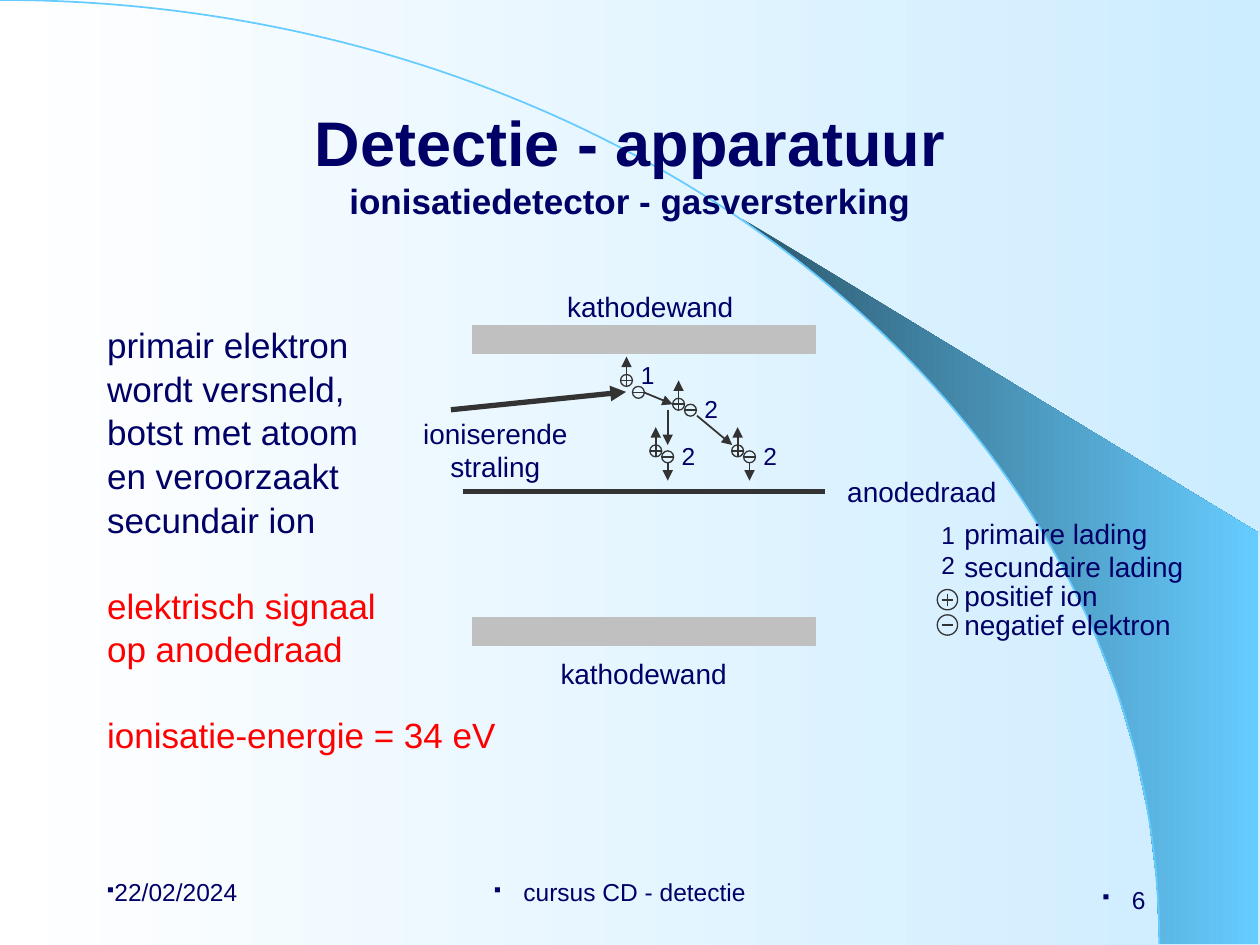
from dataclasses import dataclass
from math import asin, cos, pi, sin

from lxml.etree import SubElement
from pptx import Presentation
from pptx.dml.color import RGBColor
from pptx.enum.shapes import MSO_CONNECTOR, MSO_SHAPE
from pptx.enum.text import MSO_ANCHOR, PP_ALIGN
from pptx.oxml.ns import qn
from pptx.util import Cm, Pt

NAVY = RGBColor(0x00, 0x00, 0x66)
RED = RGBColor(0xFF, 0x00, 0x00)
DARK = RGBColor(0x33, 0x33, 0x33)
GREY = RGBColor(0xC0, 0xC0, 0xC0)
WHITE = RGBColor(0xFF, 0xFF, 0xFF)
PALE = RGBColor(0xCC, 0xEC, 0xFF)
SKY = RGBColor(0x66, 0xCC, 0xFF)
STEEL = RGBColor(0x2C, 0x58, 0x6D)
FONT = "Arial"

WIDTH, HEIGHT = 25.4, 19.05
ARC_WIDTH, ARC_HEIGHT = 23.37, 19.03
ROUND = 0.55  # Bézier handle length for a quarter ellipse
ION, LEGEND_ION = 0.24, 0.41
SIGN_HALF = 0.12
DRIFT = 0.36

Point = tuple[float, float]


@dataclass(frozen=True)
class Label:
    text: str
    left: float
    top: float
    width: float
    height: float
    size: int = 16
    align: PP_ALIGN = PP_ALIGN.LEFT
    inset: float = 0.05


@dataclass(frozen=True)
class IonPair:
    """Centre of the positive ion, with offsets to its electron and its label."""
    x: float
    y: float
    number: str = "2"
    electron_drop: float = 0.12
    label_shift: Point = (0.47, -0.25)
    electron_drifts: bool = False


FOOTERS = [
    Label("22/02/2024", 1.9, 17.35, 5.28, 1.27, 14),
    Label("cursus CD - detectie", 8.69, 17.35, 8.05, 1.27, 14, PP_ALIGN.CENTER),
    Label("6", 18.06, 17.5, 5.28, 1.27, 14, PP_ALIGN.RIGHT),
]
LABELS = [
    Label("1", 18.95, 10.46, 0.36, 0.46, 14, inset=0.03),
    Label("2", 18.95, 11.05, 0.36, 0.46, 14, inset=0.03),
    Label("primaire lading", 19.41, 10.39, 3.76, 0.61, inset=0.03),
    Label("secundaire lading", 19.41, 11.05, 4.7, 0.64, inset=0.03),
    Label("positief ion", 19.41, 11.63, 3.23, 0.51, inset=0.03),
    Label("negatief elektron", 19.41, 12.22, 5.28, 0.76, inset=0.03),
    Label("kathodewand", 11.23, 5.79, 3.76, 0.76, align=PP_ALIGN.CENTER),
    Label("kathodewand", 11.07, 13.18, 3.81, 0.89, align=PP_ALIGN.CENTER),
    Label("anodedraad", 17.03, 9.51, 3.38, 0.69),
    Label("ioniserende\nstraling", 8.5, 8.39, 2.97, 0.99,
          align=PP_ALIGN.CENTER, inset=0),
]
ION_PAIRS = [
    IonPair(12.63, 7.67, "1", 0.24, (0.24, -0.47)),
    IonPair(13.68, 8.15),
    IonPair(13.22, 9.09, electron_drifts=True),
    IonPair(14.87, 9.09, electron_drifts=True),
]
COLLISION_ARROWS = [
    ((12.98, 7.91), (13.56, 8.15)),
    ((13.46, 8.26), (13.46, 8.97)),
    ((14.05, 8.38), (14.76, 8.97)),
]
# Text, colour and space before in points
BODY = [
    ("primair elektron", NAVY, 0),
    ("wordt versneld,", NAVY, 1),
    ("botst met atoom", NAVY, 1),
    ("en veroorzaakt", NAVY, 1),
    ("secundair ion", NAVY, 1),
    ("elektrisch signaal", RED, 25),
    ("op anodedraad", RED, 1),
    ("ionisatie-energie = 34 eV", RED, 25),
]


def fill_gradient(fill, start: RGBColor, end: RGBColor) -> None:
    fill.gradient()
    fill.gradient_angle = 0
    for stop, color, position in zip(fill.gradient_stops, (start, end), (0, 1)):
        stop.color.rgb = color
        stop.position = position


def add_outline(slide, points: list[Point], close: bool):
    first, *rest = [(Cm(x), Cm(y)) for x, y in points]
    builder = slide.shapes.build_freeform(*first)
    builder.add_line_segments(rest, close=close)
    shape = builder.convert_to_shape()
    shape.shadow.inherit = False
    return shape


def add_wedge(slide) -> None:
    start, steps = asin(0.64), 13
    angles = [start + (pi / 2 - start) * i / steps for i in range(steps + 1)]
    inner = [(ARC_WIDTH * sin(a), ARC_HEIGHT * (1 - cos(a))) for a in angles]
    wedge = add_outline(slide, inner + [(25.37, 19.03), (25.37, 10.74)], True)
    fill_gradient(wedge.fill, STEEL, SKY)
    wedge.line.fill.background()


def add_arc(slide) -> None:
    """Draw a quarter ellipse as one Bézier curve."""
    arc = add_outline(slide, [(0, 0), (ARC_WIDTH, ARC_HEIGHT)], False)
    arc.fill.background()
    arc.line.color.rgb = SKY
    arc.line.width = Pt(1)
    outline = next(arc.element.iter(qn("a:path")))
    outline.remove(outline.find(qn("a:lnTo")))
    curve = SubElement(outline, qn("a:cubicBezTo"))
    for x, y in ((ROUND * ARC_WIDTH, 0), (ARC_WIDTH, (1 - ROUND) * ARC_HEIGHT),
                 (ARC_WIDTH, ARC_HEIGHT)):
        SubElement(curve, qn("a:pt"), x=str(int(Cm(x))), y=str(int(Cm(y))))


def add_frame(slide, left: float, top: float, width: float, height: float,
              inset_x: float = 0.25, inset_y: float = 0.13):
    frame = slide.shapes.add_textbox(Cm(left), Cm(top), Cm(width), Cm(height)).text_frame
    frame.word_wrap = True
    frame.margin_left = frame.margin_right = Cm(inset_x)
    frame.margin_top = frame.margin_bottom = Cm(inset_y)
    return frame


def style(font, size: int, color: RGBColor = NAVY, bold: bool = False) -> None:
    font.name, font.size, font.bold = FONT, Pt(size), bold
    font.color.rgb = color


def add_label(slide, label: Label) -> None:
    frame = add_frame(slide, label.left, label.top, label.width, label.height,
                      label.inset, label.inset)
    frame.text = label.text
    for para in frame.paragraphs:
        para.alignment = label.align
        style(para.font, label.size)


def add_footer(slide, label: Label) -> None:
    frame = add_frame(slide, label.left, label.top, label.width, label.height)
    frame.vertical_anchor = MSO_ANCHOR.MIDDLE
    para = frame.paragraphs[0]
    para.text = label.text
    para.alignment = label.align
    properties = para._p.get_or_add_pPr()
    SubElement(properties, qn("a:buSzPct"), val="70000")
    SubElement(properties, qn("a:buFont"), typeface="Wingdings", charset="2")
    SubElement(properties, qn("a:buChar"), char="§")
    style(para.font, label.size)


def add_line(slide, start: Point, end: Point, width: float = 1, arrow: bool = False) -> None:
    line = slide.shapes.add_connector(
        MSO_CONNECTOR.STRAIGHT, *(Cm(value) for value in start + end))
    line.line.color.rgb = DARK
    line.line.width = Pt(width)
    properties = line.element.spPr
    if arrow:
        SubElement(properties.find(qn("a:ln")), qn("a:tailEnd"), type="triangle")
    SubElement(properties, qn("a:effectLst"))


def add_ion(slide, x: float, y: float, diameter: float, positive: bool) -> None:
    """Draw a circled plus or minus around a centre."""
    circle = slide.shapes.add_shape(MSO_SHAPE.OVAL, Cm(x - diameter / 2),
                                    Cm(y - diameter / 2), Cm(diameter), Cm(diameter))
    circle.shadow.inherit = False
    circle.fill.background()
    circle.line.color.rgb = DARK
    circle.line.width = Pt(0.75)
    add_line(slide, (x - SIGN_HALF, y), (x + SIGN_HALF, y))
    if positive:
        add_line(slide, (x, y - SIGN_HALF), (x, y + SIGN_HALF))


def add_ion_pair(slide, pair: IonPair) -> None:
    electron_x, electron_y = pair.x + ION, pair.y + pair.electron_drop
    add_ion(slide, pair.x, pair.y, ION, True)
    add_ion(slide, electron_x, electron_y, ION, False)
    top = pair.y - ION / 2
    add_line(slide, (pair.x, top), (pair.x, top - DRIFT), arrow=True)
    if pair.electron_drifts:
        bottom = electron_y + ION / 2
        add_line(slide, (electron_x, bottom), (electron_x, bottom + DRIFT), arrow=True)
    shift_x, shift_y = pair.label_shift
    add_label(slide, Label(pair.number, pair.x + shift_x, pair.y + shift_y, 0.36, 0.48, 14))


def add_cathode(slide, top: float) -> None:
    wall = slide.shapes.add_shape(MSO_SHAPE.RECTANGLE, Cm(9.57), Cm(top), Cm(6.83), Cm(0.48))
    wall.shadow.inherit = False
    wall.fill.solid()
    wall.fill.fore_color.rgb = wall.line.color.rgb = GREY
    wall.line.width = Pt(3)
    SubElement(wall.element.spPr.find(qn("a:ln")), qn("a:miter"), lim="800000")


def add_title(slide) -> None:
    frame = add_frame(slide, 1.9, 1.69, 21.6, 3.18)
    frame.vertical_anchor = MSO_ANCHOR.MIDDLE
    para = frame.paragraphs[0]
    para.alignment = PP_ALIGN.CENTER
    heading = para.add_run()
    heading.text = "Detectie - apparatuur"
    style(heading.font, 36, bold=True)
    para.add_line_break()
    subheading = para.add_run()
    subheading.text = "ionisatiedetector - gasversterking"
    style(subheading.font, 20, bold=True)


def add_body(slide) -> None:
    frame = add_frame(slide, 1.91, 6.39, 9.6, 10.76)
    frame.text = "\n".join(text for text, _, _ in BODY)
    for para, (_, color, space) in zip(frame.paragraphs, BODY):
        para.space_before = Pt(space)
        style(para.font, 20, color)


def main() -> None:
    deck = Presentation()
    deck.slide_width, deck.slide_height = Cm(WIDTH), Cm(HEIGHT)
    slide = deck.slides.add_slide(deck.slide_layouts[6])
    fill_gradient(slide.background.fill, WHITE, PALE)
    add_wedge(slide)
    add_arc(slide)
    for footer in FOOTERS:
        add_footer(slide, footer)
    add_title(slide)
    add_body(slide)
    for top in (6.6, 12.5):
        add_cathode(slide, top)
    add_line(slide, (9.33, 9.91), (16.64, 9.91), 3)
    add_line(slide, (9.09, 8.26), (12.62, 7.9), 3, arrow=True)
    for pair in ION_PAIRS:
        add_ion_pair(slide, pair)
    for start, end in COLLISION_ARROWS:
        add_line(slide, start, end, arrow=True)
    add_ion(slide, 19.1, 12.09, LEGEND_ION, True)
    add_ion(slide, 19.1, 12.6, LEGEND_ION, False)
    for label in LABELS:
        add_label(slide, label)
    deck.save("out.pptx")


if __name__ == "__main__":
    main()
